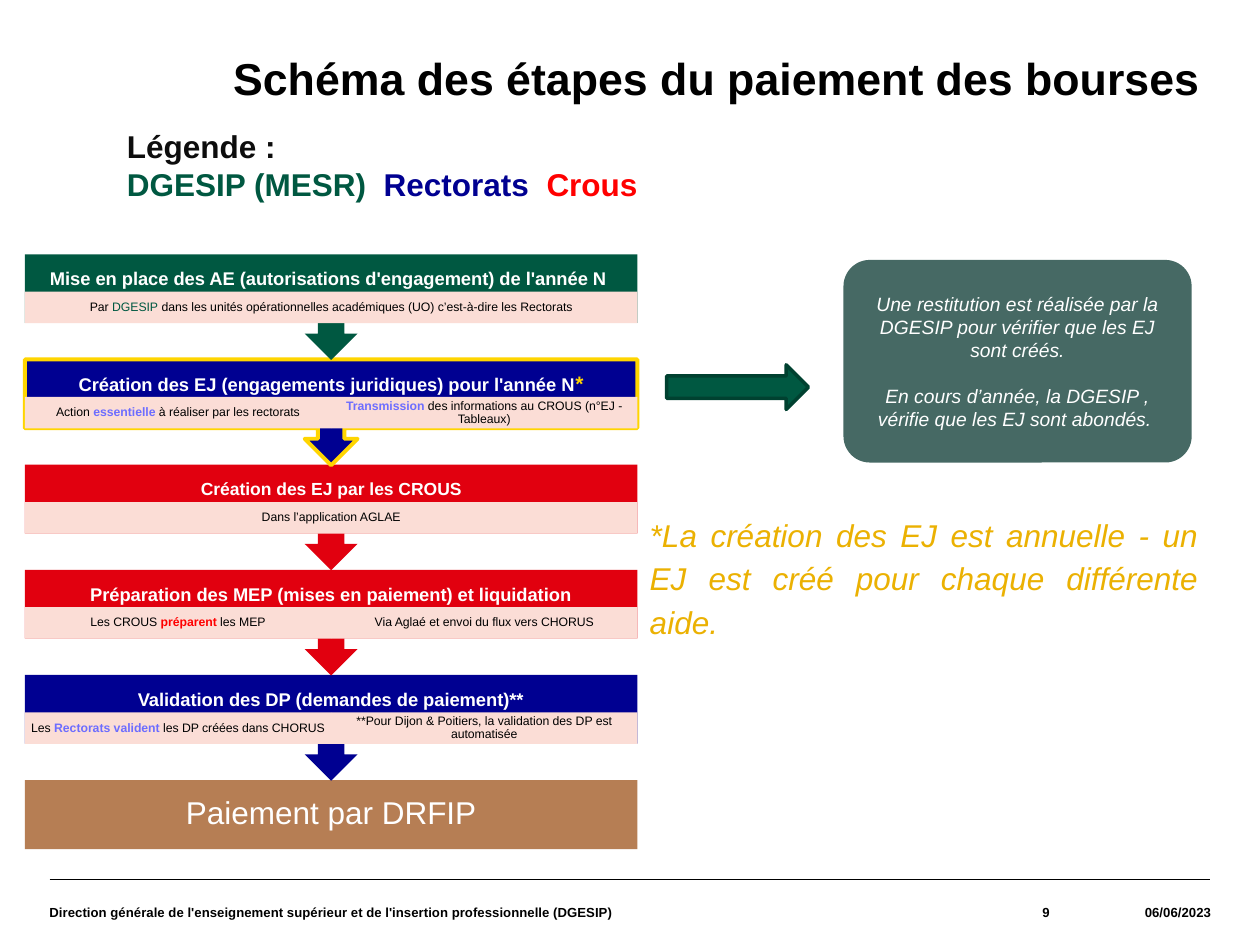
from dataclasses import dataclass
from typing import NamedTuple

from lxml.etree import SubElement
from pptx import Presentation
from pptx.dml.color import RGBColor
from pptx.enum.shapes import MSO_CONNECTOR, MSO_SHAPE as Preset
from pptx.enum.text import MSO_ANCHOR as Anchor, MSO_AUTO_SIZE as AutoSize, PP_ALIGN as Align
from pptx.oxml.ns import qn
from pptx.util import Pt

GREEN, BLUE, RED, YELLOW = "005841", "000091", "E1000F", "FFD500"
LEGEND_RED, VIOLET, PINK = "FF0000", "6D6DFF", "FBDDD6"
BLACK, WHITE = "000000", "FFFFFF"

STEP_LEFT, STEP_TOP, STEP_WIDTH, STEP_PITCH = 14.2, 145.3, 350, 60.1
CALLOUT_HEIGHT, DETAIL_OFFSET, DETAIL_HEIGHT = 60.4, 21.4, 18
LABEL_OFFSET, LABEL_HEIGHT = 7.5, 14
MARGIN, FOOTER_TOP, FOOTER_HEIGHT = 28.3, 502.5, 37.5


class Span(NamedTuple):
    text: str
    color: str = BLACK
    bold: bool = False
    italic: bool = False
    size: float | None = None


class Rect(NamedTuple):
    left: float
    top: float
    width: float
    height: float

    def lengths(self) -> list[Pt]:
        return [Pt(value) for value in self]


@dataclass
class Step:
    color: str
    heading: list[Span]
    details: list[list[Span]]
    size: float = 10.5
    outline: str | None = None


def heading(text: str) -> Span:
    return Span(text, WHITE, bold=True)


STEPS = [
    Step(GREEN, [heading("Mise en place des AE (autorisations d'engagement) de l'année N ")],
         [[Span("Par "), Span("DGESIP", GREEN),
           Span(" dans les unités opérationnelles académiques (UO) c’est-à-dire les Rectorats")]]),
    Step(BLUE, [heading("Création des EJ (engagements juridiques) pour l'année N"),
                Span("*", YELLOW, bold=True, size=12)],
         [[Span("Action "), Span("essentielle", VIOLET, bold=True),
           Span(" à réaliser par les rectorats")],
          [Span("Transmission", VIOLET, bold=True),
           Span(" des informations au CROUS (n°EJ - Tableaux)")]],
         outline=YELLOW),
    Step(RED, [heading("Création des EJ par les CROUS")],
         [[Span("Dans l’application AGLAE")]], size=10),
    Step(RED, [heading("Préparation des MEP (mises en paiement) et liquidation")],
         [[Span("Les CROUS "), Span("préparent", LEGEND_RED, bold=True), Span(" les MEP")],
          [Span("Via Aglaé et envoi du flux vers CHORUS")]]),
    Step(BLUE, [heading("Validation des DP (demandes de paiement)**")],
         [[Span("Les "), Span("Rectorats valident", VIOLET, bold=True),
           Span(" les DP créées dans CHORUS")],
          [Span("**Pour Dijon & Poitiers, la validation des DP est automatisée")]]),
]


def rgb(color: str) -> RGBColor:
    return RGBColor.from_string(color)


def write(box, paragraphs: list[list[Span]], size: float, align=Align.LEFT, anchor=Anchor.TOP,
          insets: tuple[float, float] = (7.2, 3.6), spacing: float = 1, gap: float = 0) -> None:
    """Fill a box; insets are horizontal then vertical, gap separates paragraphs."""
    frame = box.text_frame
    frame.word_wrap = True
    frame.auto_size = AutoSize.NONE
    frame.vertical_anchor = anchor
    frame.margin_left = frame.margin_right = Pt(insets[0])
    frame.margin_top = frame.margin_bottom = Pt(insets[1])
    for index, spans in enumerate(paragraphs):
        para = frame.add_paragraph() if index else frame.paragraphs[0]
        para.alignment = align
        para.line_spacing = spacing
        para.space_before = Pt(gap if index else 0)
        for span in spans:
            run = para.add_run()
            run.text = span.text
            font = run.font
            font.name = "Arial"
            font.size = Pt(span.size or size)
            font.bold, font.italic = span.bold, span.italic
            font.color.rgb = rgb(span.color)


def add_text(page, rect: Rect, paragraphs: list[list[Span]], size: float, **style) -> None:
    write(page.shapes.add_textbox(*rect.lengths()), paragraphs, size, **style)


def add_filled(page, preset, rect: Rect, fill: str, outline: str | None = None,
               weight: float = 2.25):
    shape = page.shapes.add_shape(preset, *rect.lengths())
    shape.shadow.inherit = False
    shape.fill.solid()
    shape.fill.fore_color.rgb = rgb(fill)
    if outline:
        shape.line.color.rgb = rgb(outline)
        shape.line.width = Pt(weight)
    else:
        shape.line.fill.background()
    return shape


def add_step(page, step: Step, top: float) -> None:
    callout = add_filled(page, Preset.UP_ARROW_CALLOUT,
                         Rect(STEP_LEFT, top, STEP_WIDTH, CALLOUT_HEIGHT),
                         step.color, step.outline)
    callout.rotation = 180
    add_text(page, Rect(STEP_LEFT, top + LABEL_OFFSET, STEP_WIDTH, LABEL_HEIGHT), [step.heading],
             step.size, align=Align.CENTER, anchor=Anchor.MIDDLE, insets=(6.2, 6.2), spacing=0.9)
    width = STEP_WIDTH / len(step.details)
    for column, spans in enumerate(step.details):
        cell = add_filled(page, Preset.RECTANGLE,
                          Rect(STEP_LEFT + column * width, top + DETAIL_OFFSET, width,
                               DETAIL_HEIGHT), PINK)
        write(cell, [spans], 7, align=Align.CENTER, anchor=Anchor.MIDDLE,
              insets=(3.6, 0.7), spacing=0.9)


def add_footer(page, right: float) -> None:
    rule = page.shapes.add_connector(MSO_CONNECTOR.STRAIGHT, Pt(MARGIN), Pt(FOOTER_TOP),
                                     Pt(right), Pt(FOOTER_TOP))
    rule.line.color.rgb = rgb(BLACK)
    rule.line.width = Pt(0.8)
    SubElement(rule.element.spPr, qn("a:effectLst"))
    left = MARGIN
    for text, width, align in [
        ("Direction générale de l'enseignement supérieur et de l'insertion professionnelle (DGESIP)",
         465, Align.LEFT),
        ("9", 106.5, Align.RIGHT),
        ("06/06/2023", 92.2, Align.RIGHT),
    ]:
        add_text(page, Rect(left, FOOTER_TOP, width, FOOTER_HEIGHT), [[Span(text, bold=True)]],
                 7.5, align=align, anchor=Anchor.MIDDLE, insets=(0, 0))
        left += width


def main() -> None:
    deck = Presentation()
    deck.slide_width, deck.slide_height = Pt(720), Pt(540)
    page = deck.slides.add_slide(deck.slide_layouts[5])

    title = page.shapes.title
    title.left, title.top, title.width, title.height = Rect(133.2, 32.4, 558.5, 36).lengths()
    write(title, [[Span("Schéma des étapes du paiement des bourses", bold=True)]], 25.5,
          insets=(0, 0), spacing=0.9)
    add_text(page, Rect(65.5, 69.1, 341, 51),
             [[Span("Légende :", "0D0D0D", bold=True)],
              [Span("DGESIP (MESR)  ", GREEN, bold=True), Span("Rectorats  ", BLUE, bold=True),
               Span("Crous", LEGEND_RED, bold=True)]], 18)

    # The last step goes first so that each arrow tip lies over the step below it.
    payment = add_filled(page, Preset.RECTANGLE,
                         Rect(STEP_LEFT, STEP_TOP + len(STEPS) * STEP_PITCH, STEP_WIDTH, 39.5),
                         "B67E54")
    write(payment, [[Span("Paiement par DRFIP", WHITE)]], 18, align=Align.CENTER,
          anchor=Anchor.MIDDLE, insets=(10, 10), spacing=0.9)
    for index, step in reversed(list(enumerate(STEPS))):
        add_step(page, step, STEP_TOP + index * STEP_PITCH)

    add_filled(page, Preset.RIGHT_ARROW, Rect(381, 208.5, 81, 25.5), GREEN, "004130", 2)
    check = add_filled(page, Preset.ROUNDED_RECTANGLE, Rect(482, 148.5, 199, 115.8), "466964")
    check.adjustments[0] = 0.13
    write(check, [[Span(text, WHITE, italic=True)] for text in (
        "Une restitution est réalisée par la DGESIP pour vérifier que les EJ sont créés.",
        "En cours d’année, la DGESIP , vérifie que les EJ sont abondés. ")],
          11, align=Align.CENTER, anchor=Anchor.MIDDLE, gap=13)
    add_text(page, Rect(364.2, 288, 327.5, 82.8),
             [[Span("*La création des EJ est annuelle - un EJ est créé pour chaque différente aide. ",
                    "EBB102", italic=True)]], 18, align=Align.JUSTIFY, spacing=1.15)
    add_footer(page, 720 - MARGIN)
    deck.save("out.pptx")


if __name__ == "__main__":
    main()
